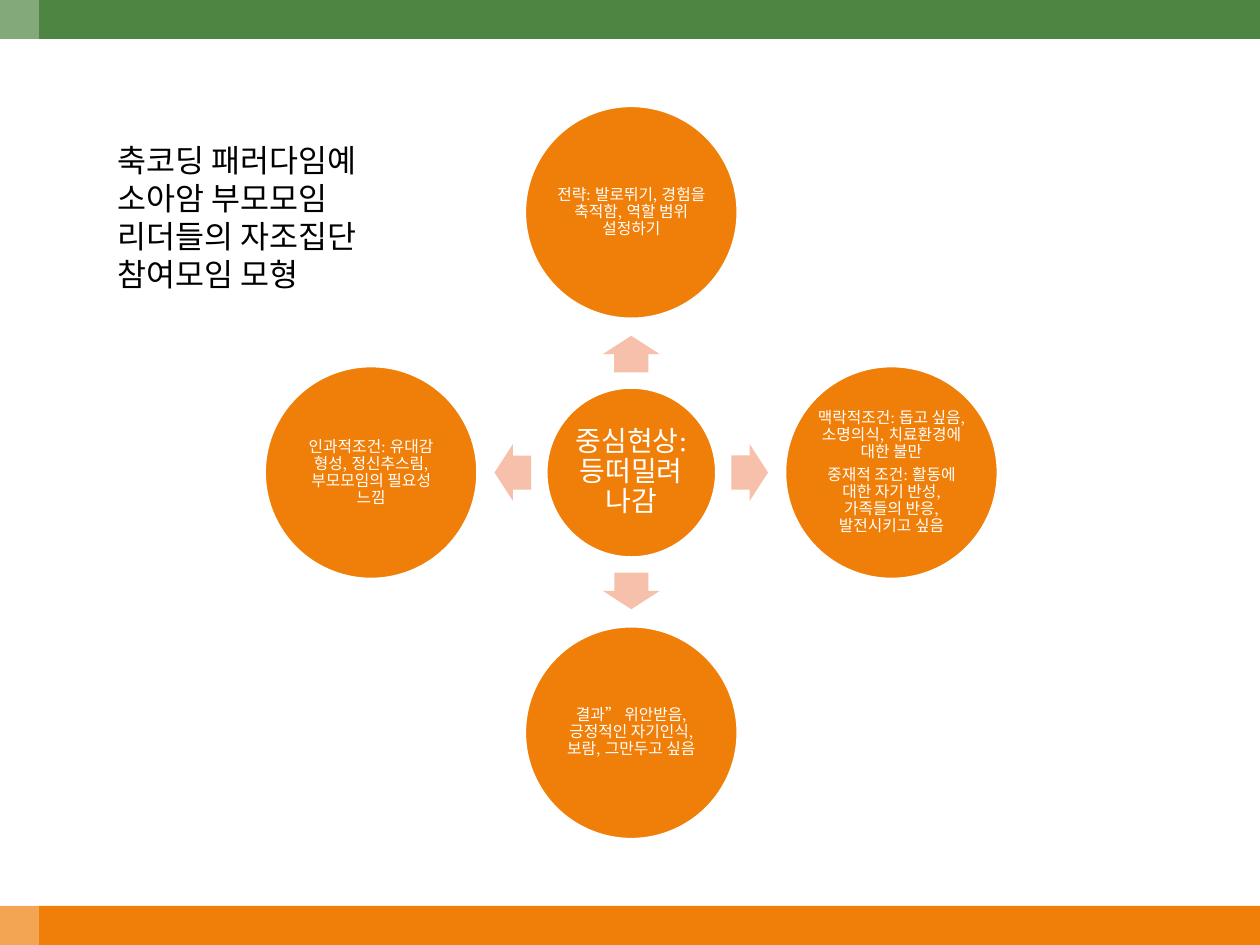
import math

import pptx
import pptx.dml.color
import pptx.enum.shapes
import pptx.enum.text
import pptx.oxml
import pptx.oxml.ns
import pptx.util

COLOURS = {
    "orange": "F07F09",
    "green": "4E8542",
    "pink": "F6C0AB",
    "white": "FFFFFF",
    "black": "000000",
}
COLUMNS, ROWS = 100, 75
ALIGN = pptx.enum.text.PP_ALIGN
ANCHOR = pptx.enum.text.MSO_ANCHOR
SHAPE = pptx.enum.shapes.MSO_SHAPE

HUB = (50.1, 37.5)
HUB_SIZE, FACTOR_SIZE = 13.5, 16.9
FACTOR_REACH, ARROW_REACH = 20.65, 9.4

HEADING = ["축코딩 패러다임예", "소아암 부모모임 리더들의 자조집단 참여모임 모형"]
PHENOMENON = ["중심현상: 등떠밀려 나감"]
FACTORS = {  # clockwise angle from the right: paragraphs
    270: ["전략: 발로뛰기, 경험을 축적함, 역할 범위 설정하기"],
    0: [
        "맥락적조건: 돕고 싶음, 소명의식, 치료환경에 대한 불만",
        "중재적 조건: 활동에 대한 자기 반성, 가족들의 반응, 발전시키고 싶음",
    ],
    90: ["결과” 위안받음, 긍정적인 자기인식, 보람, 그만두고 싶음"],
    180: ["인과적조건: 유대감 형성, 정신추스림, 부모모임의 필요성 느낌"],
}


def rgb(name):
    return pptx.dml.color.RGBColor.from_string(COLOURS[name])


def apply(target, values):
    for attribute, value in values.items():
        setattr(target, attribute, value)


class Diagram:
    """Style and current slide; lengths are columns and rows of the grid."""

    font = "TeX Gyre Schola"

    def __init__(self, deck):
        self.column = deck.slide_width / COLUMNS
        self.row = deck.slide_height / ROWS
        self.slide = deck.slides.add_slide(deck.slide_layouts[5])

    def box(self, left, top, width, height):
        return {
            "left": round(left * self.column),
            "top": round(top * self.row),
            "width": round(width * self.column),
            "height": round(height * self.row),
        }

    def label(self, frame, paragraphs, size, colour, layout, spacing):
        apply(frame, {"word_wrap": True, **layout})
        frame.text = "\n".join(paragraphs)
        for paragraph in frame.paragraphs:
            apply(paragraph, spacing)
            apply(paragraph.font, {"name": self.font, "size": pptx.util.Pt(size)})
            paragraph.font.color.rgb = rgb(colour)

    def title(self, paragraphs, *place):
        heading = self.slide.shapes.title
        apply(heading, self.box(*place))
        layout = {
            "auto_size": pptx.enum.text.MSO_AUTO_SIZE.NONE,
            "vertical_anchor": ANCHOR.TOP,
        }
        self.label(heading.text_frame, paragraphs, 18, "black", layout,
                   {"alignment": ALIGN.LEFT})

    def shape(self, kind, colour, *place):
        drawn = self.slide.shapes.add_shape(kind, **self.box(*place))
        drawn.shadow.inherit = False
        drawn.fill.solid()
        drawn.fill.fore_color.rgb = rgb(colour)
        drawn.line.fill.background()
        return drawn

    def band(self, colour, *place, opacity=None):
        stripe = self.shape(SHAPE.RECTANGLE, colour, *place)
        if opacity is not None:
            tint = next(stripe.element.spPr.iter(pptx.oxml.ns.qn("a:srgbClr")))
            alpha = pptx.oxml.parse_xml(
                f'<a:alpha {pptx.oxml.ns.nsdecls("a")} val="{opacity * 1000}"/>')
            tint.append(alpha)

    def circle(self, paragraphs, centre, diameter, size, inset):
        x, y = centre
        disc = self.shape(SHAPE.OVAL, "orange", x - diameter / 2,
                          y - diameter / 2, diameter, diameter)
        disc.line.color.rgb = rgb("white")
        disc.line.width = pptx.util.Pt(1.5)
        margins = dict.fromkeys(
            ("margin_left", "margin_top", "margin_right", "margin_bottom"),
            pptx.util.Inches(inset))
        self.label(disc.text_frame, paragraphs, size, "white",
                   {"vertical_anchor": ANCHOR.MIDDLE, **margins},
                   {"alignment": ALIGN.CENTER, "line_spacing": 0.9,
                    "space_after": pptx.util.Pt(0.35 * size)})

    def arrow(self, centre, angle, length=2.9, breadth=4.5):
        x, y = centre
        pointer = self.shape(SHAPE.RIGHT_ARROW, "pink", x - length / 2,
                             y - breadth / 2, length, breadth)
        pointer.rotation = angle
        pointer.adjustments[0], pointer.adjustments[1] = 0.6, 0.5


def around_hub(angle, reach):
    turn = math.radians(angle)
    return HUB[0] + reach * math.cos(turn), HUB[1] + reach * math.sin(turn)


def main():
    deck = pptx.Presentation()
    deck.slide_width = pptx.util.Inches(10)
    deck.slide_height = pptx.util.Inches(7.5)
    diagram = Diagram(deck)

    band = 3.1
    diagram.band("orange", 0, ROWS - band, COLUMNS, band)
    diagram.band("green", 0, 0, COLUMNS, band)
    diagram.band("white", 0, 0, band, ROWS, opacity=30)

    diagram.circle(PHENOMENON, HUB, HUB_SIZE, 16, 0.02)
    for angle, paragraphs in FACTORS.items():
        diagram.arrow(around_hub(angle, ARROW_REACH), angle)
        diagram.circle(paragraphs, around_hub(angle, FACTOR_REACH),
                       FACTOR_SIZE, 9, 0.01)
    diagram.title(HEADING, 8.3, 10.7, 24.4, 13.1)

    deck.save("out.pptx")


if __name__ == "__main__":
    main()
